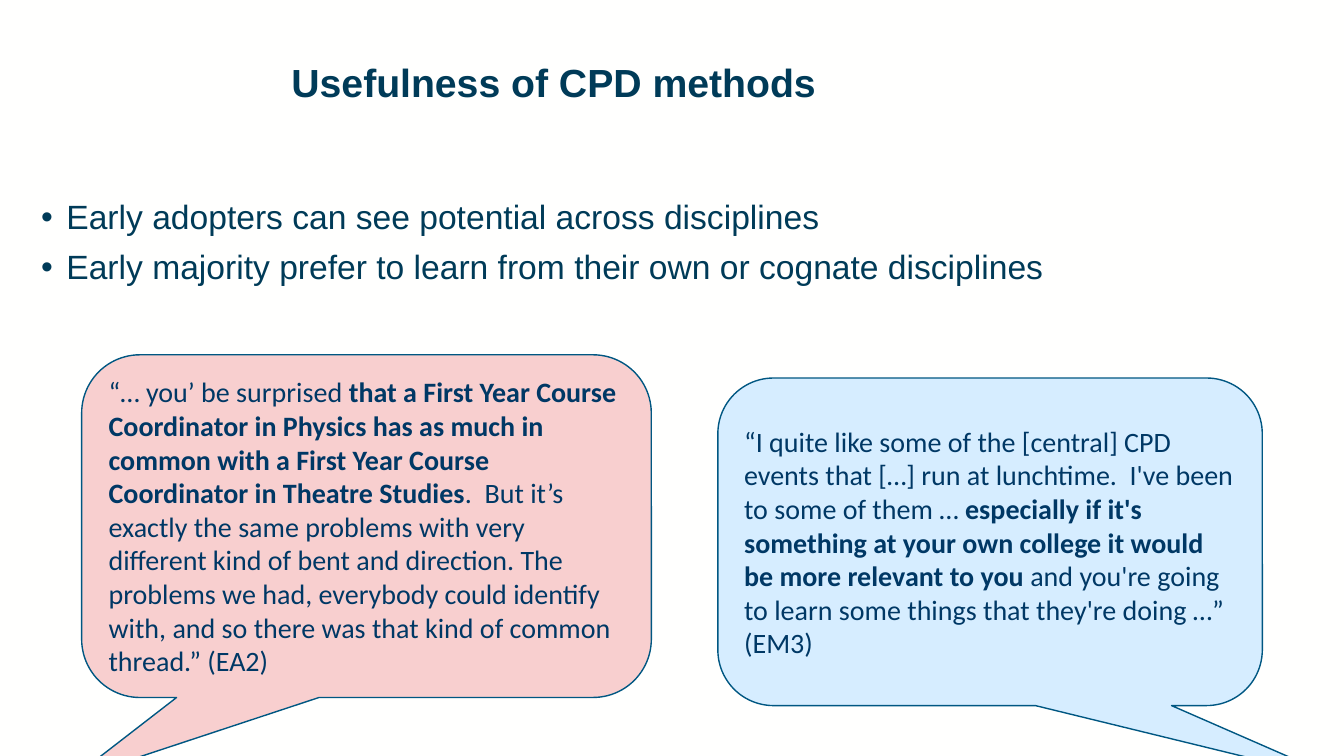
from pptx import Presentation
from pptx.dml.color import RGBColor
from pptx.enum.shapes import MSO_SHAPE
from pptx.enum.text import MSO_ANCHOR, PP_ALIGN
from pptx.oxml.ns import qn
from pptx.util import Inches, Pt
from lxml import etree

CALLOUT = MSO_SHAPE.ROUNDED_RECTANGULAR_CALLOUT
TOP, MIDDLE = MSO_ANCHOR.TOP, MSO_ANCHOR.MIDDLE
LEFT = PP_ALIGN.LEFT

BACKGROUND = RGBColor(0xFF, 0xFF, 0xFE)
HEADING = RGBColor(0x00, 0x3B, 0x58)
QUOTE = RGBColor(0x00, 0x38, 0x65)
OUTLINE = RGBColor(0x00, 0x57, 0x82)
PINK = RGBColor(0xF8, 0xCF, 0xCF)
PALE_BLUE = RGBColor(0xD6, 0xED, 0xFF)


def write(paragraph, runs, size, font="Arial", color=HEADING,
          line_spacing=None, space_before=0, bullet=False):
    """Fill a paragraph with (text, bold) runs."""
    paragraph.alignment = LEFT
    paragraph.line_spacing = line_spacing
    paragraph.space_before = Pt(space_before)
    if bullet:
        properties = paragraph._p.get_or_add_pPr()
        properties.set("marL", str(Inches(0.25)))
        properties.set("indent", str(Inches(-0.25)))
        etree.SubElement(properties, qn("a:buFont")).set("typeface", "Arial")
        etree.SubElement(properties, qn("a:buChar")).set("char", "•")
    for text, bold in runs:
        run = paragraph.add_run()
        run.text = text
        run.font.name = font
        run.font.size = Pt(size)
        run.font.bold = bold
        run.font.color.rgb = color


presentation = Presentation()
presentation.slide_width = Inches(13.33)
presentation.slide_height = Inches(7.5)
slide = presentation.slides.add_slide(presentation.slide_layouts[5])
slide.background.fill.solid()
slide.background.fill.fore_color.rgb = BACKGROUND

# Title
title = slide.shapes.title
title.left, title.top = Inches(2.79), Inches(0.58)
title.width, title.height = Inches(10.07), Inches(0.97)
title.text_frame.vertical_anchor = TOP
write(title.text_frame.paragraphs[0], [("Usefulness of CPD methods", True)],
      size=28, line_spacing=0.9)

# Bulleted findings
findings = [
    "Early adopters can see potential across disciplines",
    "Early majority prefer to learn from their own or cognate disciplines",
]
body = slide.shapes.add_textbox(Inches(0.31), Inches(1.94), Inches(12.55), Inches(1.2))
frame = body.text_frame
frame.word_wrap = True
for index, finding in enumerate(findings):
    paragraph = frame.add_paragraph() if index else frame.paragraphs[0]
    write(paragraph, [(finding, False)], size=24, line_spacing=0.9,
          space_before=10 if index else 0, bullet=True)

# Quotes in callouts: position and size, tail and corner adjustments, fill, runs
quotes = [
    ((0.81, 3.52, 5.65, 3.4), (-0.52, 0.74, 0.17), PINK, [
        ("“… you’ be surprised ", False),
        ("that a First Year Course Coordinator in Physics has as much in common "
         "with a First Year Course Coordinator in Theatre Studies", True),
        (".  But it’s exactly the same problems with very different kind of bent "
         "and direction. The problems we had, everybody could identify with, and "
         "so there was that kind of common thread.” (EA2)", False),
    ]),
    ((7.12, 3.75, 5.4, 3.25), (0.65, 0.73, 0.17), PALE_BLUE, [
        ("“I quite like some of the [central] CPD events that […] run at "
         "lunchtime.  I've been to some of them … ", False),
        ("especially if it's something at your own college it would be more "
         "relevant to you ", True),
        ("and you're going to learn some things that they're doing …” (EM3)", False),
    ]),
]
for box, adjustments, fill, runs in quotes:
    callout = slide.shapes.add_shape(CALLOUT, *map(Inches, box))
    for index, value in enumerate(adjustments):
        callout.adjustments[index] = value
    callout.shadow.inherit = False
    callout.fill.solid()
    callout.fill.fore_color.rgb = fill
    callout.line.color.rgb = OUTLINE
    callout.line.width = Pt(1)
    callout.text_frame.word_wrap = True
    callout.text_frame.vertical_anchor = MIDDLE
    write(callout.text_frame.paragraphs[0], runs, size=20, font="Calibri", color=QUOTE)

presentation.save("out.pptx")
